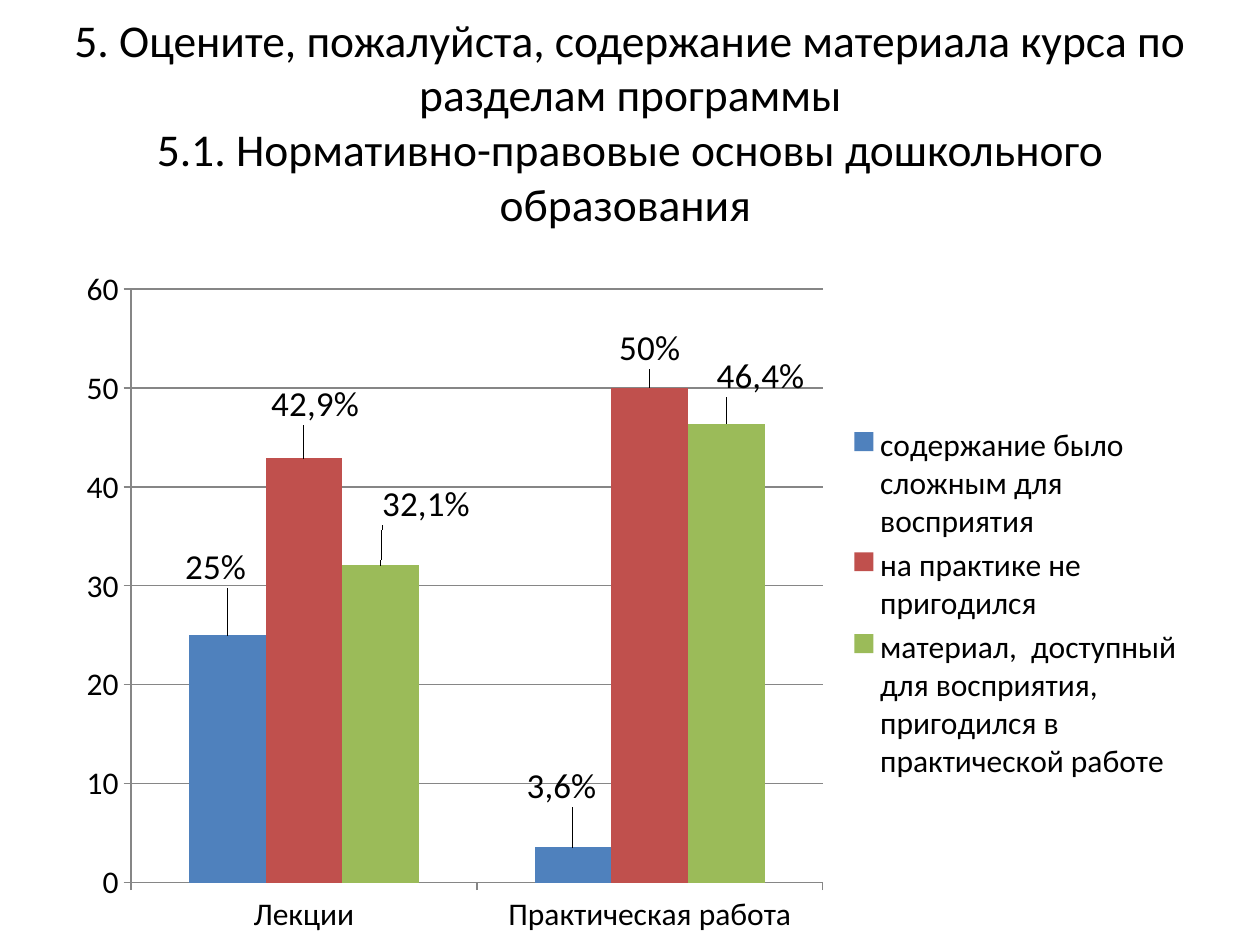
import pptx
import pptx.chart.data
import pptx.dml.color
import pptx.enum.chart
import pptx.enum.text
import pptx.oxml
import pptx.oxml.ns
import pptx.util
from pptx.util import Inches

RGBColor = pptx.dml.color.RGBColor
BLACK = RGBColor(0x00, 0x00, 0x00)
GRAY = RGBColor(0x86, 0x86, 0x86)
BLUE = RGBColor(0x4F, 0x81, 0xBD)
RED = RGBColor(0xC0, 0x50, 0x4D)
GREEN = RGBColor(0x9B, 0xBB, 0x59)

TITLE = ("5. Оцените, пожалуйста, содержание материала курса по разделам программы\v"
         "5.1. Нормативно-правовые основы дошкольного образования ")
CATEGORIES = ["Лекции", "Практическая работа"]
# Name, colour, values, label texts, label shifts as fractions of the chart size
ANSWERS = [
    ("содержание было сложным для восприятия", BLUE,
     (25, 3.6), ("25%", "3,6%"), ((-0.01, -0.06), (-0.01, -0.05))),
    ("на практике не пригодился", RED,
     (42.9, 50), ("42,9%", "50%"), ((0.01, -0.04), (0, -0.02))),
    ("материал,  доступный для восприятия, пригодился в практической работе", GREEN,
     (32.1, 46.4), ("32,1%", "46,4%"), ((0.04, -0.05), (0.03, -0.03))),
]


def set_all(target, values):
    for name, value in values.items():
        setattr(target, name, value)


def layout_xml(**settings):
    """Manual chart layout with the given settings, in schema order."""
    items = "".join(f'<c:{name} val="{value}"/>' for name, value in settings.items())
    return pptx.oxml.parse_xml(
        f'<c:layout {pptx.oxml.ns.nsdecls("c")}><c:manualLayout>{items}'
        '</c:manualLayout></c:layout>')


class SlideBuilder:
    font_name = "Calibri"

    def __init__(self, slide):
        self.slide = slide

    def style_font(self, font, size):
        set_all(font, {"name": self.font_name, "size": pptx.util.Pt(size), "bold": False})
        font.color.rgb = BLACK

    def add_title(self, text, left, top, width, height):
        box = self.slide.shapes.add_textbox(left, top, width, height)
        set_all(box.text_frame, {
            "word_wrap": True, "vertical_anchor": pptx.enum.text.MSO_ANCHOR.MIDDLE})
        para = box.text_frame.paragraphs[0]
        para.text = text
        para.alignment = pptx.enum.text.PP_ALIGN.CENTER
        for span in para.runs:
            self.style_font(span.font, 26)

    def add_columns(self, left, top, width, height):
        data = pptx.chart.data.CategoryChartData()
        data.categories = CATEGORIES
        for name, _, values, _, _ in ANSWERS:
            data.add_series(name, values)
        chart = self.slide.shapes.add_chart(
            pptx.enum.chart.XL_CHART_TYPE.COLUMN_CLUSTERED,
            left, top, width, height, data).chart
        set_all(chart, {"has_title": False, "has_legend": True})
        self.style_font(chart.font, 18)
        set_all(chart.plots[0], {"gap_width": 150, "overlap": 0, "vary_by_categories": False})

        # Axes, plot area and legend
        set_all(chart.value_axis, {
            "minimum_scale": 0, "maximum_scale": 60, "major_unit": 10,
            "has_major_gridlines": True})
        for axis in (chart.category_axis, chart.value_axis):
            axis.major_tick_mark = pptx.enum.chart.XL_TICK_MARK.OUTSIDE
            axis.format.line.color.rgb = GRAY
            self.style_font(axis.tick_labels.font, 18)
        chart.value_axis.major_gridlines.format.line.color.rgb = GRAY
        set_all(chart.legend, {
            "position": pptx.enum.chart.XL_LEGEND_POSITION.RIGHT, "include_in_layout": False})
        self.style_font(chart.legend.font, 18)
        plot_area = chart._chartSpace.chart.plotArea
        for old in plot_area.findall(pptx.oxml.ns.qn("c:layout")):
            plot_area.remove(old)
        plot_area.insert(0, layout_xml(
            layoutTarget="inner", xMode="edge", yMode="edge", x=0.06, y=0.05, w=0.61, h=0.86))
        position = chart.legend._element.find(pptx.oxml.ns.qn("c:legendPos"))
        for old in chart.legend._element.findall(pptx.oxml.ns.qn("c:layout")):
            chart.legend._element.remove(old)
        position.addnext(layout_xml(xMode="edge", yMode="edge", x=0.69, y=0.24, w=0.3, h=0.53))

        for series, (_, color, _, texts, shifts) in zip(chart.plots[0].series, ANSWERS):
            series.format.fill.solid()
            series.format.fill.fore_color.rgb = color
            self.add_labels(series, texts, shifts)

    def add_labels(self, series, texts, shifts):
        series.data_labels.show_value = True
        self.style_font(series.data_labels.font, 20)
        for index, text in enumerate(texts):
            label = series.points[index].data_label
            label.text_frame.text = text
            self.style_font(label.text_frame.paragraphs[0].runs[0].font, 20)
            label.position = pptx.enum.chart.XL_LABEL_POSITION.OUTSIDE_END
        for mark, (x, y) in zip(series._element.xpath("c:dLbls/c:dLbl"), shifts):
            mark.find(pptx.oxml.ns.qn("c:idx")).addnext(layout_xml(x=x, y=y))


def main():
    deck = pptx.Presentation()
    set_all(deck, {"slide_width": Inches(10), "slide_height": Inches(7.5)})
    builder = SlideBuilder(deck.slides.add_slide(deck.slide_layouts[6]))
    # Question
    builder.add_title(TITLE, Inches(0.2), Inches(0.3), Inches(9.61), Inches(1.32))
    # Answers by kind of class
    builder.add_columns(Inches(0.5), Inches(2.02), Inches(9), Inches(5.48))
    deck.save("out.pptx")


if __name__ == "__main__":
    main()
